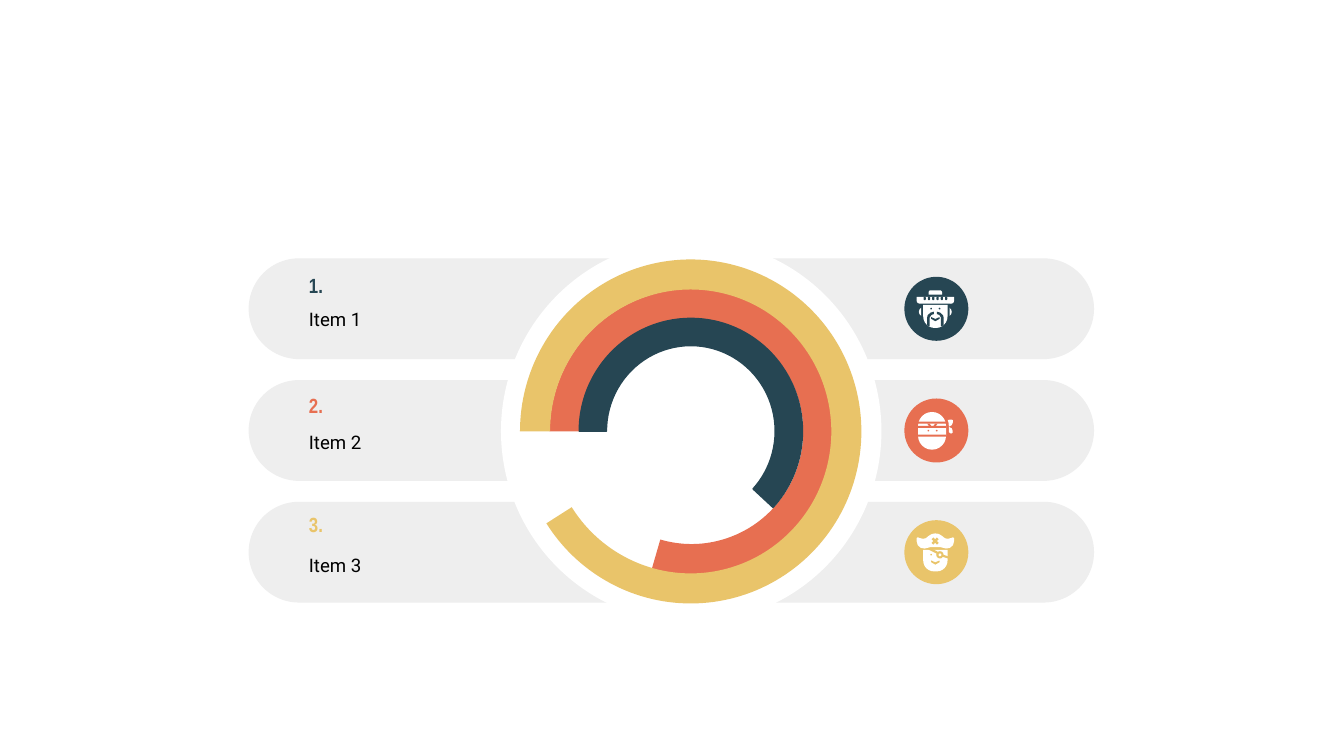
from dataclasses import dataclass

import pptx
import pptx.dml.color
import pptx.enum.shapes
import pptx.enum.text
import pptx.util

Pt = pptx.util.Pt
RGBColor = pptx.dml.color.RGBColor
Preset = pptx.enum.shapes.MSO_SHAPE

NAVY = RGBColor(0x26, 0x46, 0x53)
CORAL = RGBColor(0xE7, 0x6F, 0x51)
GOLD = RGBColor(0xE9, 0xC4, 0x6A)
GREY = RGBColor(0xEE, 0xEE, 0xEE)
WHITE = RGBColor(0xFF, 0xFF, 0xFF)
BLACK = RGBColor(0, 0, 0)

BAR_LEFT, BAR_TOP, BAR_WIDTH, BAR_HEIGHT = 133.2, 138.4, 452.9, 54
BAR_STEP = 65.2
BADGE_LEFT, BADGE_INSET, BADGE_SIZE = 484.5, 9.9, 34.3
TEXT_LEFT, TEXT_WIDTH = 158.4, 110
NUMBER_MIDDLE, NUMBER_STEP = 151.9, 64.1
LABEL_MIDDLE, LABEL_STEP = 171, 65.9
FACE_AXIS = 16.6  # symmetry axis of an icon, measured from the badge's left

Points = list[tuple[float, float]]


@dataclass
class Blob:
    """Preset part of an icon, measured from the badge's corner."""
    preset: Preset
    left: float
    top: float
    width: float
    height: float
    white: bool = True
    turn: float = 0


@dataclass
class Outline:
    """Polygon part of an icon, measured from the badge's corner."""
    points: Points
    white: bool = True


@dataclass
class Row:
    number: str
    label: str
    color: RGBColor
    icon: list[Blob | Outline]


@dataclass
class Ring:
    left: float
    top: float
    width: float
    height: float
    end_angle: float
    thickness: float
    color: RGBColor
    line_width: float = 0


def mirrored(points: Points) -> Points:
    return [(2 * FACE_AXIS - x, y) for x, y in points]


def dot(x: float, y: float) -> Blob:
    return Blob(Preset.OVAL, x, y, 0.9, 0.9, white=False)


def chin(left: float, top: float, width: float, height: float) -> Blob:
    return Blob(Preset.ROUND_2_SAME_RECTANGLE, left, top, width, height, turn=180)


def paint(shape, color: RGBColor) -> None:
    shape.shadow.inherit = False
    shape.fill.solid()
    shape.fill.fore_color.rgb = color
    shape.line.fill.background()


def add_preset(shapes, preset: Preset, left: float, top: float, width: float,
               height: float, color: RGBColor):
    shape = shapes.add_shape(preset, Pt(left), Pt(top), Pt(width), Pt(height))
    paint(shape, color)
    return shape


def add_part(shapes, part: Blob | Outline, left: float, top: float,
             badge_color: RGBColor) -> None:
    color = WHITE if part.white else badge_color
    if isinstance(part, Blob):
        shape = add_preset(shapes, part.preset, left + part.left, top + part.top,
                           part.width, part.height, color)
        shape.rotation = part.turn
        if part.preset in (Preset.ROUNDED_RECTANGLE, Preset.ROUND_2_SAME_RECTANGLE):
            shape.adjustments[0] = 0.5
    else:
        corners = [(Pt(left + x), Pt(top + y)) for x, y in part.points]
        builder = shapes.build_freeform(*corners[0])
        builder.add_line_segments(corners[1:], close=True)
        paint(builder.convert_to_shape(), color)


def add_text(shapes, text: str, *, middle: float, height: float, font: str,
             size: float, color: RGBColor, bold: bool = False,
             spacing: float = 1) -> None:
    box = shapes.add_textbox(Pt(TEXT_LEFT), Pt(middle - height / 2),
                             Pt(TEXT_WIDTH), Pt(height))
    frame = box.text_frame
    frame.word_wrap = True
    frame.vertical_anchor = pptx.enum.text.MSO_ANCHOR.MIDDLE
    frame.margin_left = frame.margin_right = Pt(7.2)
    frame.margin_top = frame.margin_bottom = Pt(7.2)
    paragraph = frame.paragraphs[0]
    paragraph.line_spacing = spacing
    run = paragraph.add_run()
    run.text = text
    run.font.name = font
    run.font.size = Pt(size)
    run.font.bold = bold
    run.font.color.rgb = color


def add_ring(shapes, ring: Ring) -> None:
    arc = add_preset(shapes, Preset.BLOCK_ARC, ring.left, ring.top, ring.width,
                     ring.height, ring.color)
    # Angles are stored in 60000ths of a degree, adjustments in 100000ths
    arc.adjustments[0] = 180 * 0.6
    arc.adjustments[1] = ring.end_angle * 0.6
    arc.adjustments[2] = ring.thickness
    if ring.line_width:
        arc.line.color.rgb = ring.color
        arc.line.width = Pt(ring.line_width)


# Icon parts
SMILE = Outline([(14.4, 21.6), (16.6, 22.6), (18.8, 21.6), (18.9, 22.5),
                 (16.6, 23.8), (14.3, 22.5)], white=False)
EAR = [(9, 16.6), (8.1, 17.6), (7.8, 18.8), (8.1, 20), (9, 20.9)]
MUSTACHE = [(15.8, 18.7), (14, 19.2), (12.5, 20.6), (12.2, 21.8), (12.2, 26),
            (13.6, 26.6), (13.6, 21.8), (14.5, 20.4), (15.8, 20)]
HALF_HAT = [(16.6, 7.1), (14.8, 7.4), (13.1, 8.4), (11.5, 9.7), (10, 10),
            (8.2, 9.6), (7.2, 9.2), (6.5, 9.6), (6.5, 11), (7.2, 13.5),
            (8.9, 14.9), (10.9, 15.2), (14.2, 14.4)]

SOMBRERO_FACE = [
    Outline(EAR), Outline(mirrored(EAR)),
    chin(6.5, 10.8, 20.2, 3.6),
    *[Blob(Preset.ROUNDED_RECTANGLE, 10.3 + 2.3 * i, 10.6, 1.2, 1.9, white=False)
      for i in range(6)],
    Blob(Preset.ROUND_2_SAME_RECTANGLE, 13, 7.2, 7.2, 2.3),
    chin(10.1, 15.1, 13, 12.3),
    Outline(MUSTACHE, white=False), Outline(mirrored(MUSTACHE), white=False),
    dot(13.9, 16.6), dot(18.4, 16.6), SMILE,
]
MASKED_FACE = [
    Blob(Preset.ROUNDED_RECTANGLE, 7.3, 7.2, 15, 20.2),
    *[Blob(Preset.RECTANGLE, 7, y, 15.6, 1.1, white=False)
      for y in (12.4, 14.7, 19.3)],
    Outline([(12.2, 13.4), (13.5, 13.4), (14.5, 14.8), (13.2, 14.8)], white=False),
    Outline([(16.5, 13.4), (17.8, 13.4), (16.8, 14.8), (15.5, 14.8)], white=False),
    dot(12.4, 16.8), dot(16.9, 16.8),
    Outline([(23.2, 11.5), (25.2, 11.3), (25.9, 11.6), (25.9, 13),
             (25.4, 14.3), (23.8, 15.1), (23.7, 13.2)]),
    Outline([(23.8, 15.1), (25.4, 16), (25.9, 17.3), (25.9, 18.3),
             (25, 18.8), (23.8, 18)]),
]
EYEPATCH_FACE = [
    Outline(HALF_HAT + mirrored(HALF_HAT)[::-1]),
    Blob(Preset.MATH_MULTIPLY, 13.7, 8.4, 5.6, 5.6, white=False),
    chin(10.1, 15.9, 13, 11.5),
    Outline([(12.9, 15.7), (14.4, 15.1), (18.2, 17.1), (17.5, 18)], white=False),
    Outline([(20.5, 18.4), (23.4, 19.4), (23.4, 20.5), (20.3, 19.6)], white=False),
    Blob(Preset.OVAL, 17.1, 16.6, 3.9, 3.9, white=False),
    Blob(Preset.OVAL, 18.3, 17.8, 1.5, 1.5),
    dot(13.9, 18), SMILE,
]

ROWS = [
    Row("1.", "Item 1", NAVY, SOMBRERO_FACE),
    Row("2.", "Item 2", CORAL, MASKED_FACE),
    Row("3.", "Item 3", GOLD, EYEPATCH_FACE),
]
RINGS = [
    Ring(294.5, 154.8, 151.9, 152.8, 106.1, 0.106, CORAL),
    Ring(310.3, 170.6, 119.6, 120.8, 42.9, 0.122, NAVY, line_width=0.75),
    Ring(278.6, 139, 182.9, 184.3, 147.5, 0.088, GOLD),
]


def main() -> None:
    deck = pptx.Presentation()
    deck.slide_width, deck.slide_height = Pt(720), Pt(405)
    shapes = deck.slides.add_slide(deck.slide_layouts[6]).shapes

    # Bars with number, label and badge
    for i, row in enumerate(ROWS):
        bar_top = BAR_TOP + i * BAR_STEP
        bar = add_preset(shapes, Preset.ROUNDED_RECTANGLE, BAR_LEFT, bar_top,
                         BAR_WIDTH, BAR_HEIGHT, GREY)
        bar.adjustments[0] = 0.5
        add_text(shapes, row.number, middle=NUMBER_MIDDLE + i * NUMBER_STEP,
                 height=12, font="Arial Narrow", size=11, color=row.color,
                 bold=True, spacing=1.15)
        add_text(shapes, row.label, middle=LABEL_MIDDLE + i * LABEL_STEP,
                 height=28, font="Roboto", size=10, color=BLACK)
        badge_top = bar_top + BADGE_INSET
        add_preset(shapes, Preset.OVAL, BADGE_LEFT, badge_top, BADGE_SIZE,
                   BADGE_SIZE, row.color)
        for part in row.icon:
            add_part(shapes, part, BADGE_LEFT, badge_top, row.color)

    # White disc with the progress rings
    add_preset(shapes, Preset.OVAL, 268.4, 128.4, 203.8, 205.2, WHITE)
    for ring in RINGS:
        add_ring(shapes, ring)

    deck.save("out.pptx")


if __name__ == "__main__":
    main()
